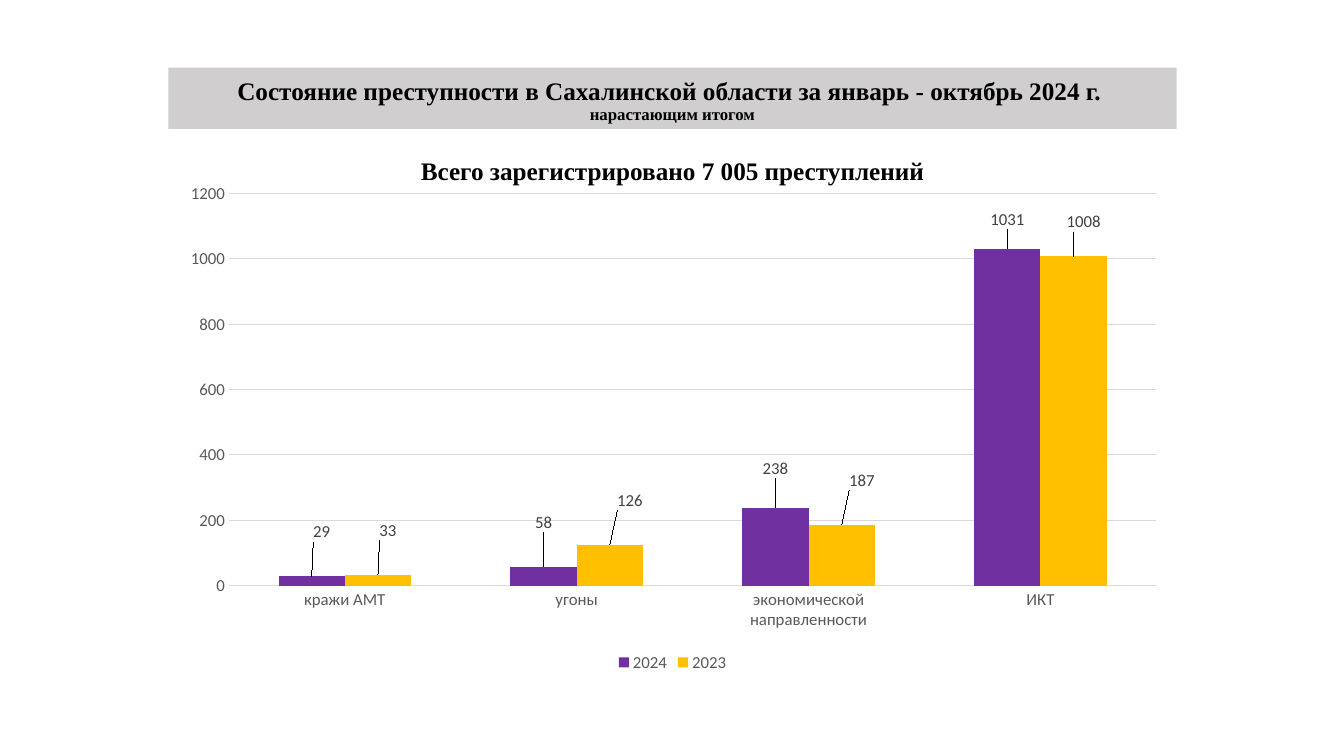
from lxml import etree
from pptx import Presentation
from pptx.chart.data import CategoryChartData
from pptx.dml.color import RGBColor
from pptx.enum.chart import XL_CHART_TYPE, XL_LABEL_POSITION, XL_LEGEND_POSITION, XL_TICK_MARK
from pptx.enum.text import MSO_ANCHOR, MSO_AUTO_SIZE, PP_ALIGN
from pptx.oxml.ns import qn
from pptx.util import Inches, Pt

COLUMNS = XL_CHART_TYPE.COLUMN_CLUSTERED
OUTSIDE_END = XL_LABEL_POSITION.OUTSIDE_END
LEGEND_BOTTOM = XL_LEGEND_POSITION.BOTTOM
NO_TICKS = XL_TICK_MARK.NONE
TOP, BOTTOM = MSO_ANCHOR.TOP, MSO_ANCHOR.BOTTOM
CENTER = PP_ALIGN.CENTER
NO_AUTOFIT = MSO_AUTO_SIZE.NONE

COLORS = {
    "banner": "D0CECE", "text": "000000", "axis": "595959",
    "label": "404040", "grid": "D9D9D9", "2024": "7030A0", "2023": "FFC000",
}
TITLE_RUNS = [
    ("Состояние преступности в Сахалинской области за январь - октябрь 2024 г. \v", 18),
    ("нарастающим итогом", 12),
]
SUBTITLE_RUNS = [("Всего зарегистрировано 7 005 преступлений", 18)]
CATEGORIES = ["кражи АМТ", "угоны", "экономической направленности", "ИКТ"]
SERIES = {"2024": [29, 58, 238, 1031], "2023": [33, 126, 187, 1008]}
LABEL_SHIFTS = {
    "2024": [(0.01, -0.06), (0, -0.06), (0, -0.05), (0, -0.03)],
    "2023": [(0.01, -0.06), (0.02, -0.06), (0.02, -0.06), (0.01, -0.04)],
}
PLOT_LAYOUT = {
    "layoutTarget": "inner", "xMode": "edge", "yMode": "edge",
    "x": 0.06, "y": 0.04, "w": 0.92, "h": 0.78,
}
LEFT, WIDTH = 1.67, 10


def color(name):
    return RGBColor.from_string(COLORS[name])


def place(shape, top, height):
    shape.left, shape.top = Inches(LEFT), Inches(top)
    shape.width, shape.height = Inches(WIDTH), Inches(height)


def format_font(font, size, color_name, name="Calibri", bold=False):
    font.size, font.name, font.bold = Pt(size), name, bold
    font.color.rgb = color(color_name)


def write_text(shape, runs, anchor, line_spacing, space_before=0):
    frame = shape.text_frame
    frame.auto_size = NO_AUTOFIT
    frame.word_wrap = True
    frame.vertical_anchor = anchor
    paragraph = frame.paragraphs[0]
    paragraph.alignment = CENTER
    paragraph.line_spacing = line_spacing
    paragraph.space_before = Pt(space_before)
    for text, size in runs:
        run = paragraph.add_run()
        run.text = text.rstrip("\v")
        format_font(run.font, size, "text", "Times New Roman", True)
        if text.endswith("\v"):
            paragraph.add_line_break()


def set_layout(parent, index, values):
    for old_layout in parent.findall(qn("c:layout")):
        parent.remove(old_layout)
    layout = etree.Element(qn("c:layout"))
    manual = etree.SubElement(layout, qn("c:manualLayout"))
    for tag, value in values.items():
        etree.SubElement(manual, qn(f"c:{tag}")).set("val", str(value))
    parent.insert(index, layout)


def format_axis(axis):
    axis.major_tick_mark = axis.minor_tick_mark = NO_TICKS
    axis.format.line.fill.background()
    format_font(axis.tick_labels.font, 12, "axis")


def format_series(series):
    series.smooth = False if hasattr(series, "smooth") else None
    series.format.fill.solid()
    series.format.fill.fore_color.rgb = color(series.name)
    labels = series.data_labels
    labels.show_value = True
    labels.position = OUTSIDE_END
    format_font(labels.font, 12, "label")
    for index, (x, y) in enumerate(LABEL_SHIFTS[series.name]):
        label = series.points[index].data_label
        label.position = OUTSIDE_END
        format_font(label.font, 12, "label")
    for element, (x, y) in zip(labels._element.findall(qn("c:dLbl")), LABEL_SHIFTS[series.name]):
        set_layout(element, 1, {"x": x, "y": y})


def add_crime_chart(slide):
    data = CategoryChartData()
    data.categories = CATEGORIES
    for name, values in SERIES.items():
        data.add_series(name, values)
    chart = slide.shapes.add_chart(
        COLUMNS, Inches(LEFT), Inches(1.72), Inches(WIDTH), Inches(4.99), data
    ).chart
    format_font(chart.font, 10, "text")
    chart.has_title = False
    chart.has_legend = True
    chart.legend.position = LEGEND_BOTTOM
    chart.legend.include_in_layout = False
    format_font(chart.legend.font, 12, "axis")

    format_axis(chart.category_axis)
    value_axis = chart.value_axis
    format_axis(value_axis)
    value_axis.minimum_scale, value_axis.maximum_scale, value_axis.major_unit = 0, 1200, 200
    value_axis.has_major_gridlines = True
    grid = value_axis.major_gridlines.format.line
    grid.width = Pt(0.75)
    grid.color.rgb = color("grid")

    plot = chart.plots[0]
    plot.vary_by_categories = False
    plot.gap_width, plot.overlap = 150, 0
    for series in plot.series:
        format_series(series)
    set_layout(chart._chartSpace.find(".//" + qn("c:plotArea")), 0, PLOT_LAYOUT)


def main():
    presentation = Presentation()
    presentation.slide_width, presentation.slide_height = Inches(13.33), Inches(7.5)
    slide = presentation.slides.add_slide(presentation.slide_layouts[0])

    title, subtitle = slide.shapes.title, slide.placeholders[1]
    place(title, 0.67, 0.61)
    title.fill.solid()
    title.fill.fore_color.rgb = color("banner")
    write_text(title, TITLE_RUNS, BOTTOM, 0.9)
    place(subtitle, 1.55, 0.36)
    write_text(subtitle, SUBTITLE_RUNS, TOP, 0.8, space_before=10)
    add_crime_chart(slide)
    presentation.save("out.pptx")


if __name__ == "__main__":
    main()
